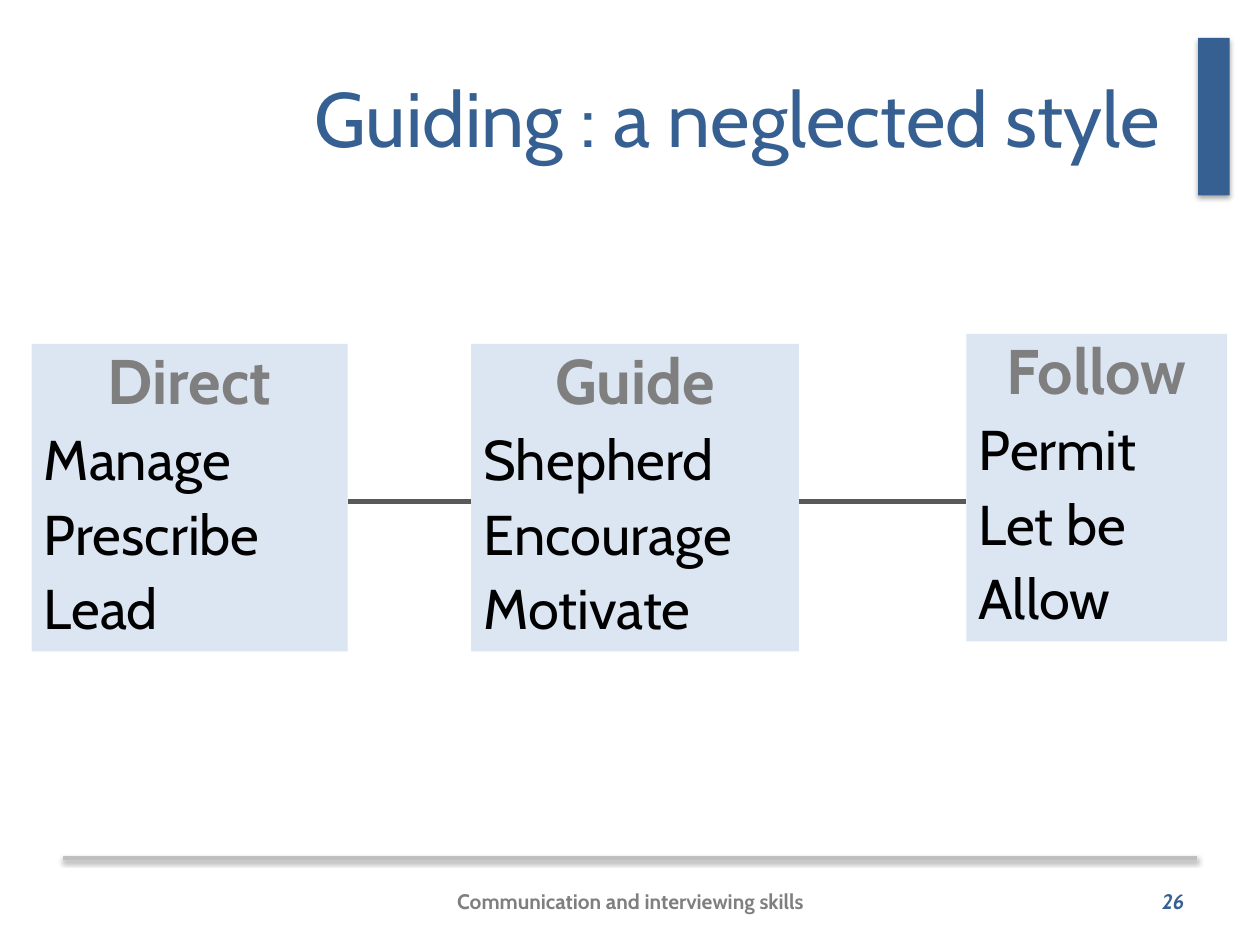
from lxml import etree
from pptx import Presentation
from pptx.dml.color import RGBColor
from pptx.enum.shapes import MSO_CONNECTOR, MSO_SHAPE
from pptx.enum.text import MSO_ANCHOR, MSO_AUTO_SIZE, PP_ALIGN
from pptx.oxml.ns import qn
from pptx.util import Inches, Pt

STRAIGHT = MSO_CONNECTOR.STRAIGHT
RECT = MSO_SHAPE.RECTANGLE
TOP, MIDDLE = MSO_ANCHOR.TOP, MSO_ANCHOR.MIDDLE
LEFT, CENTER, RIGHT = PP_ALIGN.LEFT, PP_ALIGN.CENTER, PP_ALIGN.RIGHT
FIT_SHAPE, NO_FIT = MSO_AUTO_SIZE.SHAPE_TO_FIT_TEXT, MSO_AUTO_SIZE.NONE

TITLE = "Guiding : a neglected style"
FOOTER = "Communication and interviewing skills"
PAGE = "26"
# heading, words, left, top, width
STYLES = [
    ("Direct", ["Manage", "Prescribe", "Lead"], 0.25, 2.73, 2.51),
    ("Guide", ["Shepherd", "Encourage", "Motivate"], 3.74, 2.73, 2.6),
    ("Follow", ["Permit", "Let be", "Allow"], 7.67, 2.65, 2.07),
]
BOX_HEIGHT = 2.44
LINK_Y = 3.98

THEME = {
    "font": "Cabin",
    "accent": "376092", "box": "DCE6F2", "muted": "7F7F7F",
    "body": "000000", "link": "595959", "rule": "BFBFBF",
    "title_size": 44, "heading_size": 36, "body_size": 32, "footer_size": 12,
}


def color(name):
    return RGBColor.from_string(THEME[name])


def add_run(p, text, size, fill, bold=False, italic=False):
    r = p.add_run()
    r.text = text
    r.font.name = THEME["font"]
    r.font.size = Pt(THEME[size])
    r.font.bold = bold
    r.font.italic = italic
    r.font.color.rgb = color(fill)


def set_shadow(sp, alpha=0, blur=0, distance=0):
    """Replace the theme shadow by a downward one, or by none if alpha is 0."""
    effects = etree.SubElement(sp._element.spPr, qn("a:effectLst"))
    if alpha:
        outer = etree.SubElement(
            effects, qn("a:outerShdw"), blurRad=str(Pt(blur)),
            dist=str(Pt(distance)), dir="5400000", rotWithShape="0")
        black = etree.SubElement(outer, qn("a:srgbClr"), val="000000")
        etree.SubElement(black, qn("a:alpha"), val=str(alpha * 1000))


def add_line(s, x1, x2, y, fill, width, **shadow):
    line = s.shapes.add_connector(
        STRAIGHT, Inches(x1), Inches(y), Inches(x2), Inches(y))
    line.line.color.rgb = color(fill)
    line.line.width = Pt(width)
    set_shadow(line, **shadow)


def add_rect(s, left, top, width, height, fill, **shadow):
    sp = s.shapes.add_shape(
        RECT, Inches(left), Inches(top), Inches(width), Inches(height))
    sp.fill.solid()
    sp.fill.fore_color.rgb = color(fill)
    sp.line.fill.background()
    set_shadow(sp, **shadow)
    return sp


def add_footer_text(s, left, width, text, align, fill, italic=False):
    sp = s.shapes.add_textbox(
        Inches(left), Inches(6.95), Inches(width), Inches(0.4))
    tf = sp.text_frame
    tf.word_wrap = True
    tf.vertical_anchor = MIDDLE
    p = tf.paragraphs[0]
    p.alignment = align
    add_run(p, text, "footer_size", fill, bold=True, italic=italic)


def add_style_box(s, heading, words, left, top, width):
    tf = add_rect(s, left, top, width, BOX_HEIGHT, "box").text_frame
    tf.word_wrap = True
    tf.vertical_anchor = TOP
    tf.auto_size = FIT_SHAPE
    p = tf.paragraphs[0]
    p.alignment = CENTER
    p.line_spacing = 0.9
    add_run(p, heading, "heading_size", "muted", bold=True)
    for word in words:
        p = tf.add_paragraph()
        p.alignment = LEFT
        p.line_spacing = 0.9
        p.space_before = Pt(8)
        add_run(p, word, "body_size", "body")


def add_title(s):
    title = s.shapes.title
    title.left, title.top = Inches(0.5), Inches(0.3)
    title.width, title.height = Inches(8.81), Inches(1.25)
    tf = title.text_frame
    tf.word_wrap = True
    tf.auto_size = NO_FIT
    tf.vertical_anchor = MIDDLE
    p = tf.paragraphs[0]
    p.alignment = RIGHT
    add_run(p, TITLE, "title_size", "accent")


def main():
    prs = Presentation()
    prs.slide_width, prs.slide_height = Inches(10), Inches(7.5)
    s = prs.slides.add_slide(prs.slide_layouts[5])

    add_line(s, 0.5, 9.5, 6.81, "rule", 2, alpha=38, blur=3.1, distance=1.6)
    add_rect(s, 9.51, 0.3, 0.25, 1.25, "accent",
             alpha=35, blur=3.1, distance=1.8)
    add_title(s)
    for style in STYLES:
        add_style_box(s, *style)
    for (_, _, left, _, width), (_, _, next_left, _, _) in zip(STYLES, STYLES[1:]):
        add_line(s, left + width, next_left, LINK_Y, "link", 3)
    add_footer_text(s, 3.42, 3.17, FOOTER, CENTER, "muted")
    add_footer_text(s, 7.17, 2.33, PAGE, RIGHT, "accent", italic=True)
    prs.save("out.pptx")


if __name__ == "__main__":
    main()
